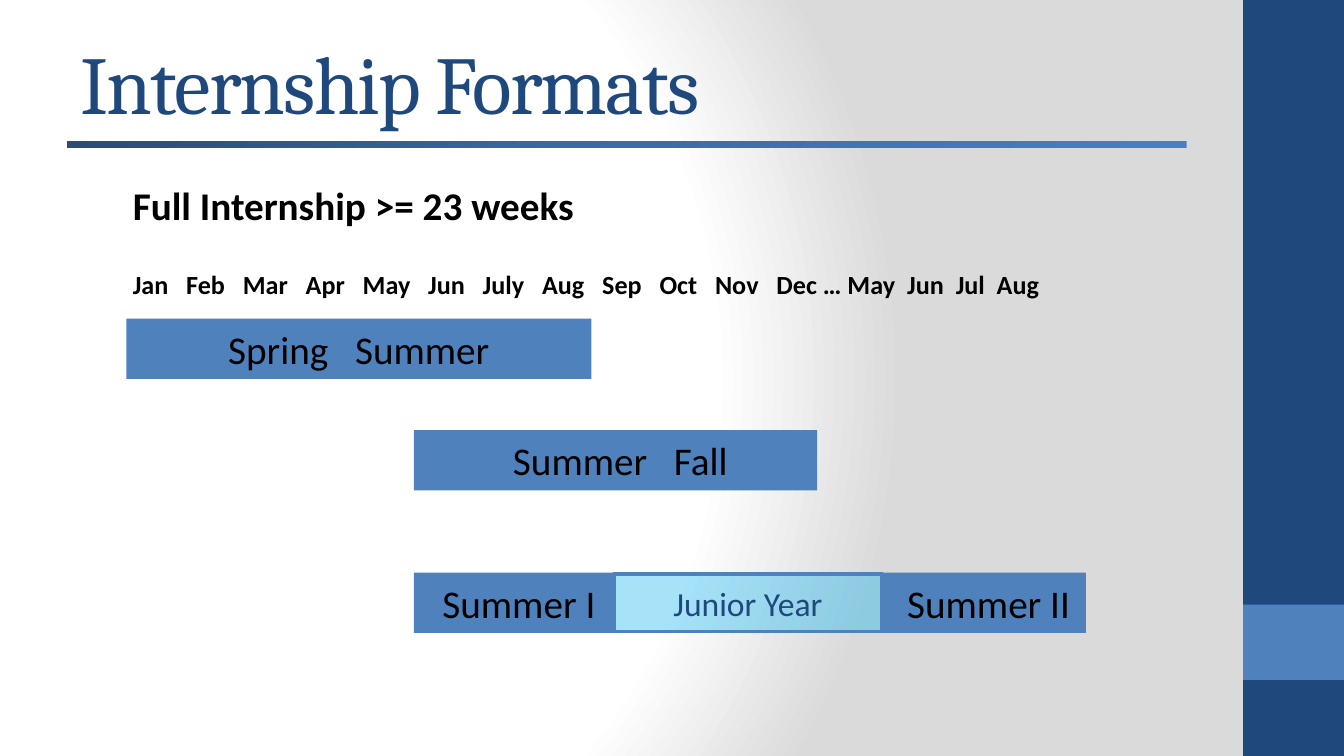
from dataclasses import dataclass

from pptx import Presentation
from pptx.dml.color import RGBColor
from pptx.enum.shapes import MSO_SHAPE as Shape
from pptx.enum.text import MSO_ANCHOR as Anchor, PP_ALIGN as Align
from pptx.oxml import parse_xml
from pptx.oxml.ns import nsdecls, qn
from pptx.util import Inches, Pt


@dataclass(frozen=True)
class Theme:
    navy: str = "1F497D"
    blue: str = "4F81BD"
    sky: str = "00B0F0"
    black: str = "000000"
    white: str = "FFFFFF"
    backdrop: tuple = ((0, "FFFFFF"), (75, "FFFFFF"), (100, "DADADA"))
    rule: tuple = ((0, "2A4C75"), (50, "3C6CA6"), (100, "4780C5"))
    heading_font: str = "Cambria"
    body_font: str = "Calibri"
    title_size: int = 44
    label_size: int = 21
    junior_size: int = 18
    month_size: int = 14


THEME = Theme()
SPACE_WIDTH = 0.226  # width of a Calibri space, in ems


def set_circle_gradient(properties, stops, focus):
    """Replace a solid fill; focus holds left, top, right, bottom in percent."""
    stop_list = "".join(
        f'<a:gs pos="{position * 1000}"><a:srgbClr val="{color}"/></a:gs>'
        for position, color in stops
    )
    left, top, right, bottom = (percent * 1000 for percent in focus)
    gradient = parse_xml(
        f'<a:gradFill {nsdecls("a")} rotWithShape="1"><a:gsLst>{stop_list}</a:gsLst>'
        f'<a:path path="circle"><a:fillToRect l="{left}" t="{top}" '
        f'r="{right}" b="{bottom}"/></a:path></a:gradFill>'
    )
    properties.replace(properties.find(qn("a:solidFill")), gradient)


def set_background(slide):
    fill = slide.background.fill
    fill.solid()
    fill.fore_color.rgb = RGBColor.from_string(THEME.white)
    properties = slide.element.find(".//" + qn("p:bgPr"))
    set_circle_gradient(properties, THEME.backdrop, (20, 50, 100, 50))


def add_block(slide, left, top, width, height, color):
    shape = slide.shapes.add_shape(
        Shape.RECTANGLE, Inches(left), Inches(top), Inches(width), Inches(height)
    )
    shape.shadow.inherit = False
    shape.fill.solid()
    shape.fill.fore_color.rgb = RGBColor.from_string(color)
    shape.line.fill.background()
    return shape


def style_text(shape, size, color=THEME.black, font=THEME.body_font,
               bold=False, align=Align.LEFT, wrap=True):
    frame = shape.text_frame
    frame.word_wrap = wrap
    frame.vertical_anchor = Anchor.MIDDLE
    paragraph = frame.paragraphs[0]
    paragraph.alignment = align
    paragraph.font.name = font
    paragraph.font.size = Pt(size)
    paragraph.font.bold = bold
    paragraph.font.color.rgb = RGBColor.from_string(color)
    return paragraph


def add_run(paragraph, text, tracking=0):
    """Add text with extra letter spacing in points."""
    run = paragraph.add_run()
    run.text = text
    if tracking:
        run.font._element.set("spc", str(round(tracking * 100)))


def add_spaced_words(paragraph, words, size, gap):
    """Set words apart by a gap counted in space widths."""
    for index, word in enumerate(words):
        if index:
            add_run(paragraph, " ", (gap - 1) * SPACE_WIDTH * size)
        add_run(paragraph, word)


def add_text_box(slide, left, top, width, height, size, **style):
    box = slide.shapes.add_textbox(
        Inches(left), Inches(top), Inches(width), Inches(height)
    )
    return style_text(box, size, **style)


def add_term_bar(slide, left, top, width, words, indent=0.1):
    bar = add_block(slide, left, top, width, 0.45, THEME.blue)
    bar.text_frame.margin_left = Inches(indent)
    paragraph = style_text(bar, THEME.label_size, align=Align.CENTER)
    add_spaced_words(paragraph, words, THEME.label_size, gap=3)


def add_junior_year(slide, left, top, width):
    block = add_block(slide, left, top, width, 0.43, THEME.sky)
    color = block.fill._xPr.find(qn("a:solidFill"))[0]
    color.append(parse_xml(f'<a:alpha {nsdecls("a")} val="35000"/>'))
    block.line.color.rgb = RGBColor.from_string(THEME.blue)
    block.line.width = Pt(2)
    paragraph = style_text(block, THEME.junior_size, THEME.navy, align=Align.CENTER)
    add_run(paragraph, "Junior Year")


def add_month_scale(slide):
    size = THEME.month_size
    paragraph = add_text_box(slide, 0.89, 1.94, 6.97, 0.34, size, bold=True, wrap=False)
    first_year = ["Jan", "Feb", "Mar", "Apr", "May", "Jun",
                  "July", "Aug", "Sep", "Oct", "Nov", "Dec"]
    add_spaced_words(paragraph, first_year, size, gap=3)
    add_run(paragraph, " … ")
    add_spaced_words(paragraph, ["May", "Jun", "Jul", "Aug"], size, gap=2)


def add_frame(slide, slide_height):
    side_band = add_block(slide, 9.25, 0, 0.75, 5.62, THEME.navy)
    side_band.height = slide_height
    add_block(slide, 9.25, 4.5, 0.75, 0.56, THEME.blue)
    rule = add_block(slide, 0.5, 1.05, 8.33, 0.05, THEME.blue)
    set_circle_gradient(rule.fill._xPr, THEME.rule, (0, 0, 100, 100))


def main():
    presentation = Presentation()
    presentation.slide_width = Inches(10)
    presentation.slide_height = Inches(10) * 9 // 16
    slide = presentation.slides.add_slide(presentation.slide_layouts[6])
    set_background(slide)
    add_frame(slide, presentation.slide_height)

    title = add_text_box(slide, 0.5, 0.23, 8.33, 0.75, THEME.title_size,
                         color=THEME.navy, font=THEME.heading_font)
    add_run(title, "Internship Formats", tracking=-1)
    heading = add_text_box(slide, 0.89, 1.3, 3.52, 0.45, THEME.label_size,
                           bold=True, wrap=False)
    add_run(heading, "Full Internship >= 23 weeks")

    add_month_scale(slide)
    add_term_bar(slide, 0.94, 2.37, 3.46, ["Spring", "Summer"])
    add_term_bar(slide, 3.08, 3.2, 3, ["Summer", "Fall"], indent=0.17)
    add_junior_year(slide, 4.57, 4.27, 1.99)
    add_term_bar(slide, 3.08, 4.26, 1.49, ["Summer I"], indent=0.17)
    add_term_bar(slide, 6.56, 4.26, 1.52, ["Summer II"], indent=0.17)
    presentation.save("out.pptx")


if __name__ == "__main__":
    main()
